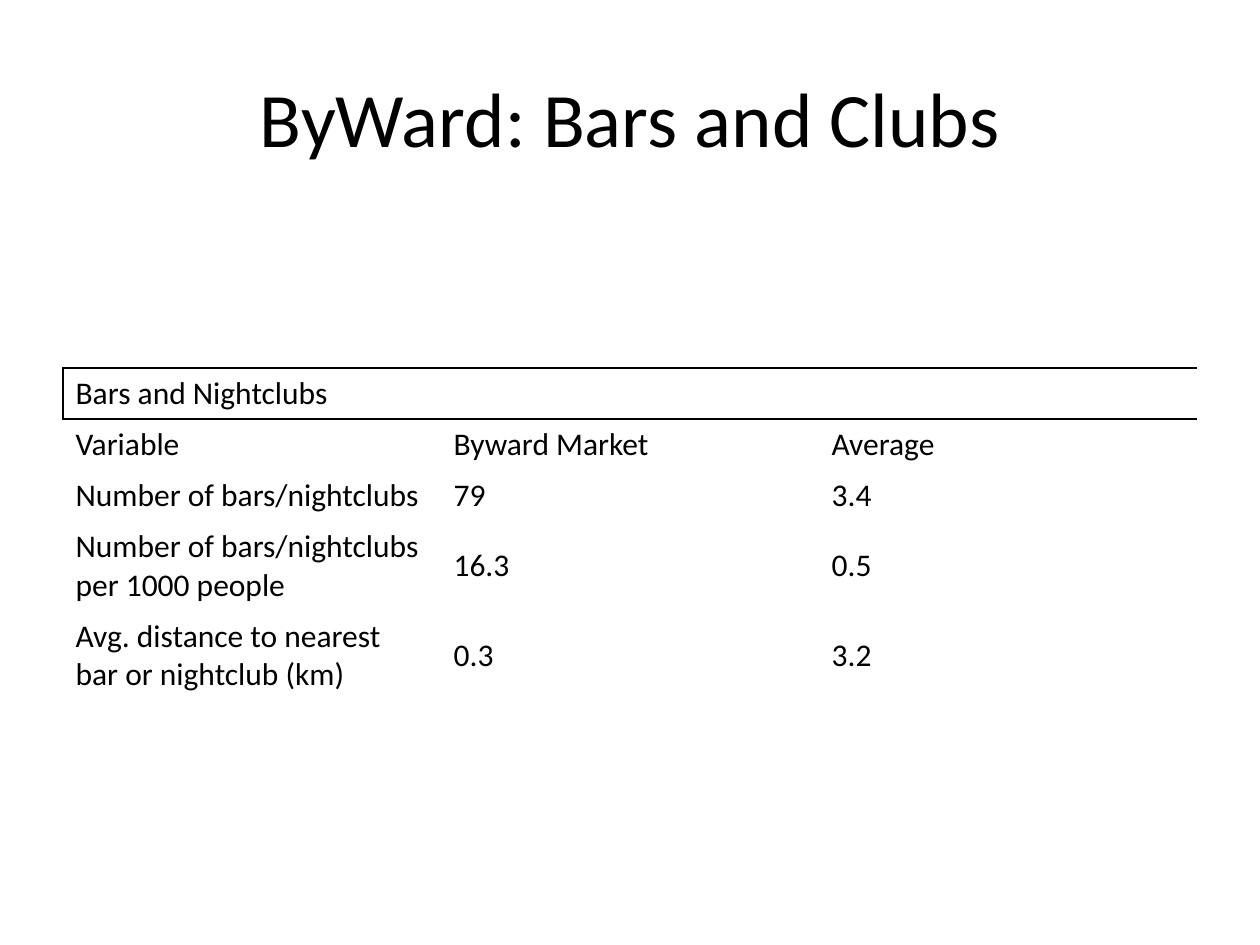
from lxml.etree import SubElement
from pptx import Presentation
from pptx.dml.color import RGBColor
from pptx.enum.text import MSO_ANCHOR as Anchor, PP_ALIGN as Align
from pptx.oxml.ns import qn
from pptx.util import Cm, Pt

INK = "000000"
NO_STYLE = "{2D5ABB26-0587-4C30-8999-92F81FD0307C}"
SIDES = ["lnL", "lnR", "lnT", "lnB"]

HEADING = "Bars and Nightclubs"
ROWS = [
    ["Variable", "Byward Market", "Average"],
    ["Number of bars/nightclubs", "79", "3.4"],
    ["Number of bars/nightclubs per 1000 people", "16.3", "0.5"],
    ["Avg. distance to nearest bar or nightclub (km)", "0.3", "3.2"],
]
ROW_HEIGHTS = [1.03, 1.03, 1.03, 1.8, 1.8]
# Sides drawn on each cell of the merged heading row
HEADING_BORDERS = [{"lnL", "lnT", "lnB"}, {"lnT"}, {"lnR", "lnT"}]


def rgb(value):
    return RGBColor.from_string(value)


def write(frame, text, size=18, font="Calibri", color=INK, align=Align.LEFT):
    paragraph = frame.paragraphs[0]
    paragraph.alignment = align
    run = paragraph.add_run()
    run.text = text
    run.font.size = Pt(size)
    run.font.name = font
    run.font.color.rgb = rgb(color)


class Deck:
    def __init__(self):
        self.prs = Presentation()
        self.prs.slide_width, self.prs.slide_height = Cm(25.4), Cm(19.05)
        self.slide = self.prs.slides.add_slide(self.prs.slide_layouts[5])
        self.slide.background.fill.solid()
        self.slide.background.fill.fore_color.rgb = rgb("FFFFFF")

    def title(self, text, left, top, width, height):
        title = self.slide.shapes.title
        title.left, title.top = Cm(left), Cm(top)
        title.width, title.height = Cm(width), Cm(height)
        title.text_frame.vertical_anchor = Anchor.MIDDLE
        write(title.text_frame, text, size=44, align=Align.CENTER)

    def border(self, cell, sides, color=INK, width=1):
        """Outline the named sides of a cell and clear the others."""
        props = cell._tc.get_or_add_tcPr()
        for position, side in enumerate(SIDES):
            line = SubElement(props, qn(f"a:{side}"), w=str(Pt(width)))
            props.insert(position, line)
            if side in sides:
                fill = SubElement(line, qn("a:solidFill"))
                SubElement(fill, qn("a:srgbClr"), val=color)
            else:
                SubElement(line, qn("a:noFill"))

    def table(self, heading, rows, heights, left, top, width):
        columns = len(rows[0])
        frame = self.slide.shapes.add_table(
            len(heights), columns, Cm(left), Cm(top), Cm(width), Cm(sum(heights)))
        table = frame.table
        table.first_row = table.horz_banding = False
        frame._element.find(".//" + qn("a:tableStyleId")).text = NO_STYLE
        for row, height in zip(table.rows, heights):
            row.height = Cm(height)

        # Heading across all columns, then the values
        table.cell(0, 0).merge(table.cell(0, columns - 1))
        for r, texts in enumerate([[heading], *rows]):
            for c, text in enumerate(texts):
                write(table.cell(r, c).text_frame, text)
        for cell in table.iter_cells():
            cell.vertical_anchor = Anchor.MIDDLE
            cell.fill.background()
        for c, sides in enumerate(HEADING_BORDERS):
            self.border(table.cell(0, c), sides)


def main():
    deck = Deck()
    deck.title("ByWard: Bars and Clubs", 1.27, 0.76, 22.86, 3.18)
    deck.table(HEADING, ROWS, ROW_HEIGHTS, 1.27, 7.42, 22.86)
    deck.prs.save("out.pptx")


if __name__ == "__main__":
    main()
